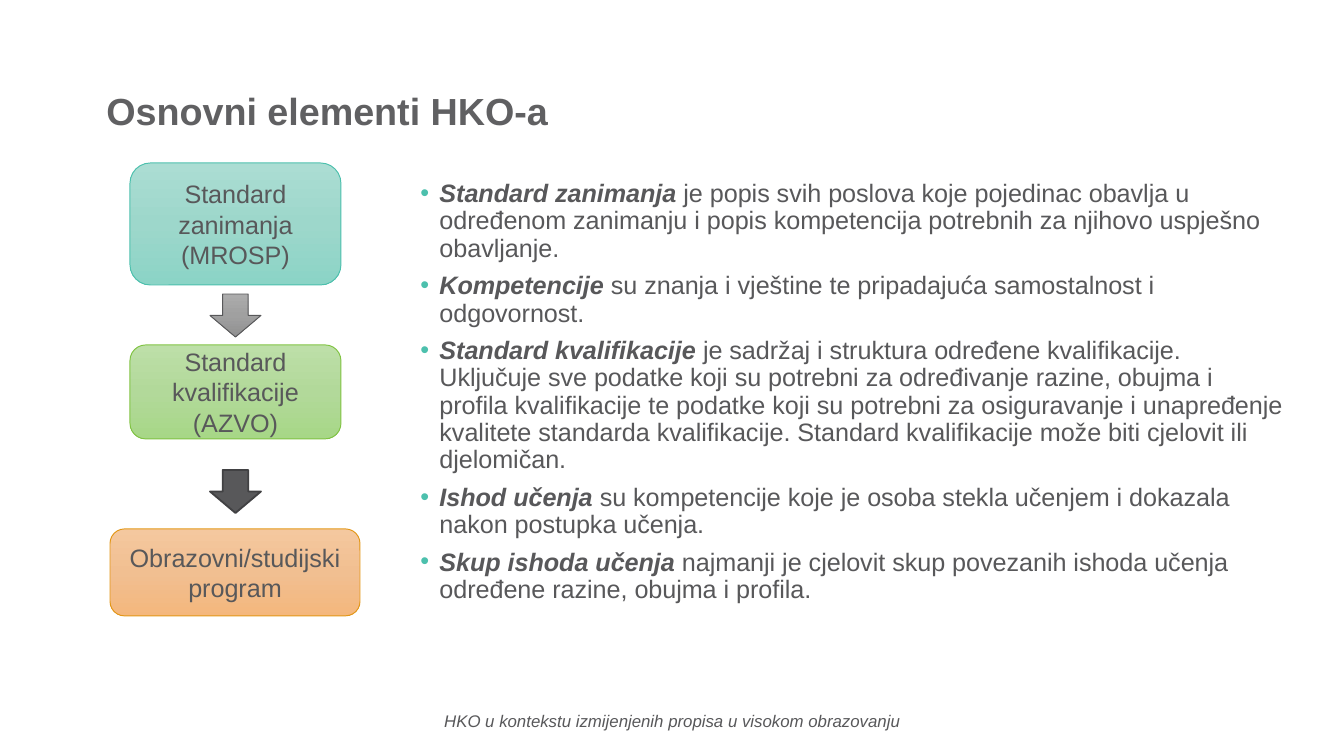
from copy import deepcopy
from dataclasses import dataclass

from lxml import etree
from pptx import Presentation
from pptx.dml.color import RGBColor
from pptx.enum.shapes import MSO_SHAPE
from pptx.enum.text import MSO_ANCHOR, MSO_AUTO_SIZE, PP_ALIGN
from pptx.oxml.ns import qn
from pptx.util import Emu, Pt

ROUNDED = MSO_SHAPE.ROUNDED_RECTANGLE
DOWN_ARROW = MSO_SHAPE.DOWN_ARROW
MIDDLE, TOP = MSO_ANCHOR.MIDDLE, MSO_ANCHOR.TOP
LEFT, CENTER = PP_ALIGN.LEFT, PP_ALIGN.CENTER
NO_AUTOFIT = MSO_AUTO_SIZE.NONE

FLOW_CENTER = 235  # px, shared axis of the boxes and arrows


@dataclass(frozen=True)
class Theme:
    font: str = "Arial"
    title: str = "606062"
    text: str = "58585A"
    bullet: str = "4CC0AD"
    title_size: float = 20.2
    body_size: float = 13.5
    footer_size: float = 9
    line_spacing: float = 0.9
    space_before: float = 5.6


@dataclass(frozen=True)
class FlowItem:
    preset: int
    top: int
    width: int
    height: int
    colors: tuple[str, ...]
    line: str
    line_width: float = 0.5
    label: str = ""


@dataclass(frozen=True)
class Definition:
    term: str
    meaning: str


THEME = Theme()

FLOW = [
    FlowItem(ROUNDED, 163, 211, 122, ("ABDDD3", "9DD7CB", "8BD4C6"), "4CC0AD",
             label="Standard zanimanja\v(MROSP)"),
    FlowItem(ROUNDED, 345, 211, 94, ("BDDFA8", "B2D99A", "A7D787"), "80C342",
             label="Standard kvalifikacije\v(AZVO)"),
    FlowItem(ROUNDED, 529, 250, 87, ("F4C89F", "F1BF91", "F4B77D"), "E39717",
             label="Obrazovni/studijski program"),
    FlowItem(DOWN_ARROW, 294, 51, 43, ("ACACAC", "A0A0A0", "909091"), "58585A"),
    FlowItem(DOWN_ARROW, 470, 51, 43, ("58585A",), "414143", 1),
]

DEFINITIONS = [
    Definition("Standard zanimanja ",
               "je popis svih poslova koje pojedinac obavlja u određenom zanimanju i popis "
               "kompetencija potrebnih za njihovo uspješno obavljanje."),
    Definition("Kompetencije",
               " su znanja i vještine te pripadajuća samostalnost i odgovornost."),
    Definition("Standard kvalifikacije ",
               "je sadržaj i struktura određene kvalifikacije. Uključuje sve podatke koji su "
               "potrebni za određivanje razine, obujma i profila kvalifikacije te podatke koji "
               "su potrebni za osiguravanje i unapređenje kvalitete standarda kvalifikacije. "
               "Standard kvalifikacije može biti cjelovit ili djelomičan."),
    Definition("Ishod učenja ",
               "su kompetencije koje je osoba stekla učenjem i dokazala nakon postupka učenja."),
    Definition("Skup ishoda učenja ",
               "najmanji je cjelovit skup povezanih ishoda učenja određene razine, obujma i "
               "profila."),
]


def px(length: int) -> Emu:
    return Emu(round(length * 914400 / 134.4))


def place(shape, left: int, top: int, width: int, height: int) -> None:
    shape.left, shape.top = px(left), px(top)
    shape.width, shape.height = px(width), px(height)


def set_up_frame(frame, anchor) -> None:
    frame.word_wrap = True
    frame.auto_size = NO_AUTOFIT
    frame.vertical_anchor = anchor


def style_span(span, size: float, color: str = THEME.text,
               bold: bool = False, italic: bool = False) -> None:
    font = span.font
    font.name, font.size = THEME.font, Pt(size)
    font.bold, font.italic = bold, italic
    font.color.rgb = RGBColor.from_string(color)


def add_bullet(para) -> None:
    properties = para._p.get_or_add_pPr()
    properties.set("marL", str(px(19)))
    properties.set("indent", str(-px(19)))
    color = etree.SubElement(properties, qn("a:buClr"))
    etree.SubElement(color, qn("a:srgbClr"), val=THEME.bullet)
    etree.SubElement(properties, qn("a:buFont"), typeface=THEME.font)
    etree.SubElement(properties, qn("a:buChar"), char="•")


def fill_shape(shape, colors: tuple[str, ...]) -> None:
    fill = shape.fill
    if len(colors) == 1:
        fill.solid()
        fill.fore_color.rgb = RGBColor.from_string(colors[0])
        return
    fill.gradient()
    fill.gradient_angle = 270
    stop_list = shape._element.spPr.find(f"{qn('a:gradFill')}/{qn('a:gsLst')}")
    while len(stop_list) < len(colors):
        stop_list.insert(1, deepcopy(stop_list[0]))
    for index, (stop, color) in enumerate(zip(fill.gradient_stops, colors)):
        stop.position = index / (len(colors) - 1)
        stop.color.rgb = RGBColor.from_string(color)


def draw_flow_item(page, item: FlowItem) -> None:
    shape = page.shapes.add_shape(
        item.preset, px(FLOW_CENTER - item.width // 2), px(item.top),
        px(item.width), px(item.height))
    shape.shadow.inherit = False
    fill_shape(shape, item.colors)
    shape.line.color.rgb = RGBColor.from_string(item.line)
    shape.line.width = Pt(item.line_width)
    if item.label:
        set_up_frame(shape.text_frame, MIDDLE)
        para = shape.text_frame.paragraphs[0]
        para.text = item.label
        para.alignment = CENTER
        for span in para.runs:
            style_span(span, THEME.body_size)


def write_title(title) -> None:
    place(title, 93, 40, 1159, 146)
    set_up_frame(title.text_frame, MIDDLE)
    para = title.text_frame.paragraphs[0]
    para.text = "Osnovni elementi HKO-a"
    para.alignment = LEFT
    para.line_spacing = THEME.line_spacing
    style_span(para.runs[0], THEME.title_size, THEME.title, bold=True)


def write_definitions(body) -> None:
    place(body, 407, 70, 893, 611)
    frame = body.text_frame
    set_up_frame(frame, TOP)
    frame.margin_top = px(111)
    for index, definition in enumerate(DEFINITIONS):
        para = frame.add_paragraph() if index else frame.paragraphs[0]
        add_bullet(para)
        para.alignment = LEFT
        para.line_spacing = THEME.line_spacing
        para.space_before = Pt(THEME.space_before if index else 0)
        for text, strong in ((definition.term, True), (definition.meaning, False)):
            span = para.add_run()
            span.text = text
            style_span(span, THEME.body_size, bold=strong, italic=strong)


def write_footer(page) -> None:
    box = page.shapes.add_textbox(px(303), px(701), px(738), px(40))
    set_up_frame(box.text_frame, MIDDLE)
    para = box.text_frame.paragraphs[0]
    para.text = "HKO u kontekstu izmijenjenih propisa u visokom obrazovanju"
    para.alignment = CENTER
    style_span(para.runs[0], THEME.footer_size, italic=True)


def main() -> None:
    deck = Presentation()
    deck.slide_width, deck.slide_height = px(1344), px(756)
    page = deck.slides.add_slide(deck.slide_layouts[1])

    # Title, definitions and footer
    write_title(page.shapes.title)
    write_definitions(page.placeholders[1])
    write_footer(page)

    # Flow from occupation to programme
    for item in FLOW:
        draw_flow_item(page, item)

    deck.save("out.pptx")


if __name__ == "__main__":
    main()
